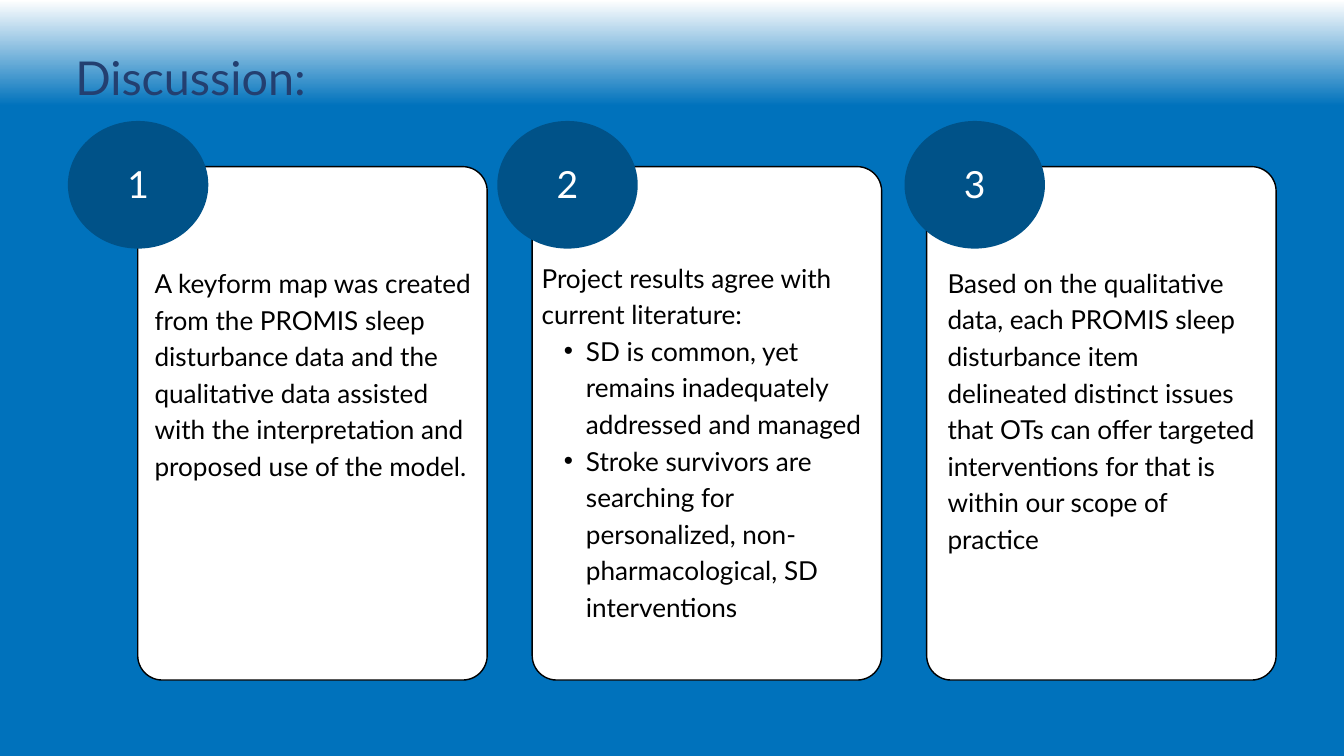
from lxml import etree
from pptx import Presentation
from pptx.dml.color import RGBColor
from pptx.enum.shapes import MSO_SHAPE
from pptx.enum.text import MSO_ANCHOR, MSO_AUTO_SIZE, PP_ALIGN
from pptx.oxml.ns import qn
from pptx.util import Emu, Pt

ROUNDED, OVAL = MSO_SHAPE.ROUNDED_RECTANGLE, MSO_SHAPE.OVAL
TOP, MIDDLE = MSO_ANCHOR.TOP, MSO_ANCHOR.MIDDLE
LEFT, CENTER = PP_ALIGN.LEFT, PP_ALIGN.CENTER
FIXED = MSO_AUTO_SIZE.NONE

EMU_PER_PX = 9144
FONT = "Lato"
BLUE, NAVY, WHITE, BLACK = "0072BC", "005288", "FFFFFF", "000000"
TITLE_COLOR = "233F70"

CARD_LEFT, CARD_TOP, CARD_STEP = 205, 248, 587
CARD_WIDTH, CARD_HEIGHT = 520, 764
BADGE_WIDTH, BADGE_HEIGHT, BADGE_RISE = 209, 190, 68

FINDINGS = [
    {
        "badge_dx": -104,
        "body_box": (25, 142, 482, 432),
        "intro": "A keyform map was created from the PROMIS sleep disturbance data and "
                 "the qualitative data assisted with the interpretation and proposed use "
                 "of the model.",
        "points": [],
    },
    {
        "badge_dx": -52,
        "body_box": (14, 134, 492, 594),
        "intro": "Project results agree with current literature:",
        "points": [
            "SD is common, yet remains inadequately addressed and managed",
            "Stroke survivors are searching for personalized, non-pharmacological, "
            "SD interventions",
        ],
    },
    {
        "badge_dx": -33,
        "body_box": (31, 142, 458, 540),
        "intro": "Based on the qualitative data, each PROMIS sleep disturbance item "
                 "delineated distinct issues that OTs can offer targeted interventions "
                 "for that is within our scope of practice",
        "points": [],
    },
]


def px(length):
    """Turn a length in px into EMU."""
    return Emu(length * EMU_PER_PX)


def rgb(color):
    """Turn a hex string into a colour."""
    return RGBColor.from_string(color)


def assign(target, values):
    """Set every attribute in a dict on the target."""
    for name, value in values.items():
        setattr(target, name, value)


def place(shape, left, top, width, height):
    """Move and size a shape in px."""
    assign(shape, {"left": px(left), "top": px(top),
                   "width": px(width), "height": px(height)})


def set_frame(frame, anchor=TOP, inset=0, bottom=0):
    """Set wrapping, anchor and insets of a text frame."""
    assign(frame, {
        "word_wrap": True, "auto_size": FIXED, "vertical_anchor": anchor,
        "margin_left": px(inset), "margin_right": px(inset),
        "margin_top": px(inset), "margin_bottom": px(bottom),
    })


def write(paragraph, text, size, color, align=LEFT, bullet=False):
    """Write one paragraph, with or without a bullet."""
    paragraph.text = text
    assign(paragraph, {"alignment": align, "line_spacing": Pt(size * 1.4),
                       "space_before": Pt(0), "level": int(bullet)})
    properties = paragraph._p.get_or_add_pPr()
    properties.set("marL", str(px(66 if bullet else 0)))
    properties.set("indent", str(px(-33 if bullet else 0)))
    if bullet:
        etree.SubElement(properties, qn("a:buFont")).set("typeface", "Arial")
        etree.SubElement(properties, qn("a:buChar")).set("char", "•")
    else:
        etree.SubElement(properties, qn("a:buNone"))
    assign(paragraph.font, {"name": FONT, "size": Pt(size)})
    paragraph.font.color.rgb = rgb(color)


def add_filled(slide, kind, box, fill):
    """Add a flat preset shape without an outline."""
    shape = slide.shapes.add_shape(kind, *map(px, box))
    shape.shadow.inherit = False
    shape.fill.solid()
    shape.fill.fore_color.rgb = rgb(fill)
    shape.line.fill.background()
    return shape


def paint_background(slide):
    """Fade the top of the slide from white to blue."""
    fill = slide.background.fill
    fill.gradient()
    fill.gradient_angle = 270
    for stop, position, color in zip(fill.gradient_stops, (0, 0.14), (WHITE, BLUE)):
        stop.position = position
        stop.color.rgb = rgb(color)


def fill_title(title, box):
    """Place and write the slide title."""
    place(title, *box)
    set_frame(title.text_frame)
    write(title.text_frame.paragraphs[0], "Discussion:", 50, TITLE_COLOR)


def add_badge(slide, left, top, number):
    """Add a numbered oval."""
    badge = add_filled(slide, OVAL, (left, top, BADGE_WIDTH, BADGE_HEIGHT), NAVY)
    set_frame(badge.text_frame, MIDDLE, 6, 21)
    write(badge.text_frame.paragraphs[0], str(number), 40, WHITE, CENTER)


def add_finding(slide, left, top, number, finding, list_body):
    """Add a card with its badge and body text."""
    card = add_filled(slide, ROUNDED, (left, top, CARD_WIDTH, CARD_HEIGHT), WHITE)
    card.adjustments[0] = 0.07
    card.line.color.rgb = rgb(BLACK)
    card.line.width = Pt(1.5)
    add_badge(slide, left + finding["badge_dx"], top - BADGE_RISE, number)

    dx, dy, width, height = finding["body_box"]
    if finding["points"]:
        body = list_body
        slide.shapes.element.append(body.element)
    else:
        body = slide.shapes.add_textbox(0, 0, 0, 0)
    place(body, left + dx, top + dy, width, height)
    frame = body.text_frame
    set_frame(frame)
    write(frame.paragraphs[0], finding["intro"], 28, BLACK)
    for point in finding["points"]:
        write(frame.add_paragraph(), point, 28, BLACK, bullet=True)


def main():
    """Build the discussion slide and save it."""
    deck = Presentation()
    assign(deck, {"slide_width": px(2000), "slide_height": px(1125)})
    slide = deck.slides.add_slide(deck.slide_layouts[1])
    title, list_body = slide.placeholders
    paint_background(slide)
    fill_title(title, (112, 59, 859, 95))
    for index, finding in enumerate(FINDINGS):
        add_finding(slide, CARD_LEFT + index * CARD_STEP, CARD_TOP,
                    index + 1, finding, list_body)
    deck.save("out.pptx")


if __name__ == "__main__":
    main()
